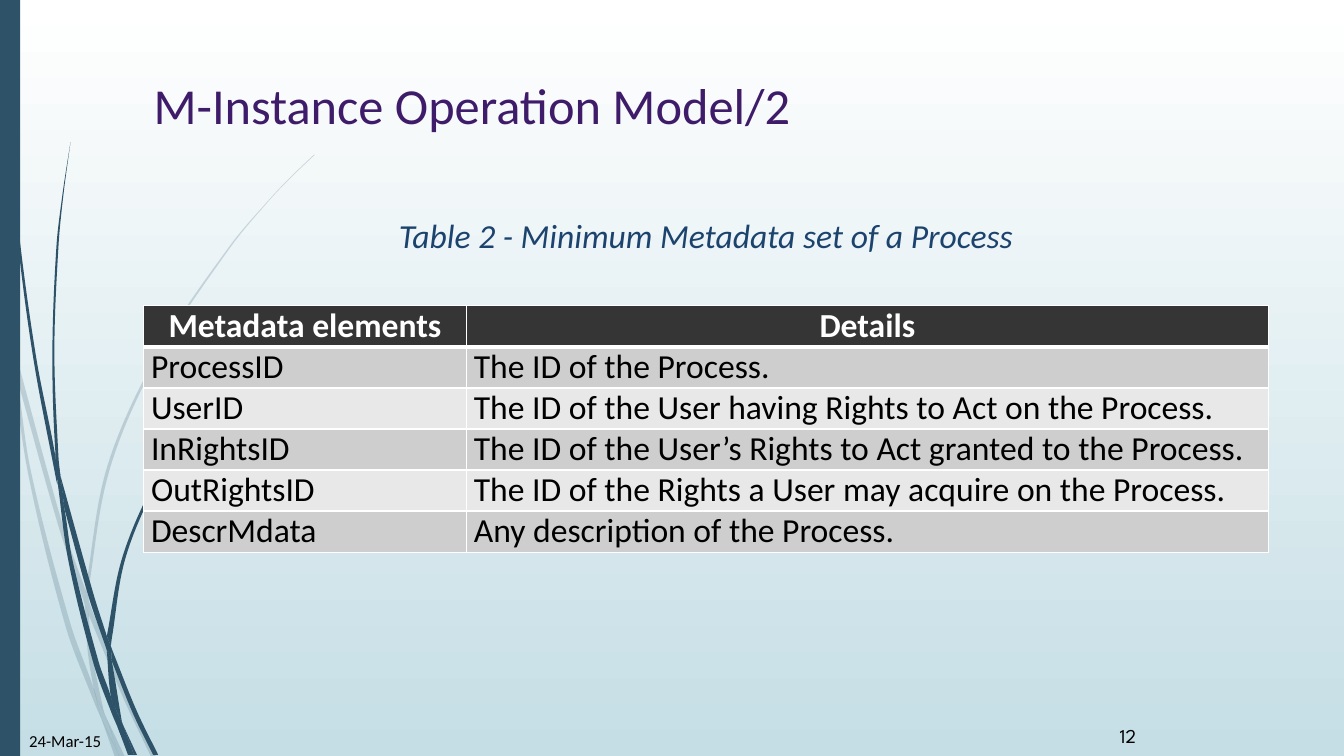
from itertools import pairwise
from lxml.etree import SubElement
from pptx import Presentation
from pptx.dml.color import RGBColor
from pptx.enum.shapes import MSO_SHAPE
from pptx.enum.text import MSO_ANCHOR, PP_ALIGN
from pptx.oxml import parse_xml
from pptx.oxml.ns import nsdecls, qn
from pptx.util import Pt

COLORS = {
    "white": "FFFFFF", "sky": "C5DEE5", "teal": "2E5369", "purple": "3F1C6A",
    "navy": "1C436D", "black": "000000", "header": "353535",
    "odd": "CECECE", "even": "E8E8E8",
}
GRID = 0.72
FINE = 10

PALE_BLADES = [
    ([(0, 282), (9, 322), (11, 350)], [(0, 299), (10, 344), (11, 350)]),
    ([(14, 345), (62, 520), (85, 586)], [(17, 376), (58, 522), (84, 599)]),
    ([(88, 596), (92, 607), (127, 692), (155, 751)],
     [(88, 610), (123, 694), (150, 751)]),
    ([(105, 711), (124, 751)], [(105, 711), (119, 751)]),
    ([(11, 350), (17, 376), (31, 469), (70, 619), (93, 683), (99, 707), (101, 714)],
     [(11, 350), (28, 470), (65, 621), (92, 693), (101, 714)]),
    ([(84, 599), (87, 646), (93, 683), (96, 692), (105, 711)],
     [(88, 608), (91, 646), (103, 706), (105, 711)]),
    ([(312, 153), (289, 175), (268, 197), (228, 244), (158, 348), (107, 461),
      (85, 584), (85, 586)],
     [(312, 154), (290, 175), (268, 198), (229, 245), (160, 349), (110, 462),
      (88, 584), (88, 596)]),
    ([(101, 714), (114, 751)], [(101, 714), (119, 751)]),
    ([(85, 586), (84, 599)], [(88, 596), (88, 608)]),
    ([(93, 683), (99, 707), (101, 714), (119, 751)],
     [(93, 683), (96, 692), (105, 711), (119, 751)]),
]
DARK_BLADES = [
    ([(4, 0), (5, 48), (8, 109), (19, 232), (36, 355), (55, 453), (57, 481)],
     [(3, 0), (4, 48), (7, 110), (17, 233), (33, 355), (56, 477), (57, 481)]),
    ([(60, 472), (93, 590), (106, 631)], [(64, 505), (88, 592), (106, 645)]),
    ([(110, 641), (113, 649), (136, 706), (157, 749)],
     [(111, 656), (132, 708), (152, 749)]),
    ([(57, 477), (64, 505), (72, 556), (98, 657), (110, 691), (117, 722)],
     [(57, 477), (68, 557), (93, 659), (111, 708), (117, 722)]),
    ([(70, 141), (62, 193), (56, 245), (52, 349), (55, 449), (60, 472)],
     [(70, 141), (63, 193), (58, 245), (54, 349), (58, 453), (60, 472)]),
    ([(122, 719), (136, 749)], [(122, 719), (133, 749)]),
    ([(55, 449), (55, 453), (57, 477), (64, 505)],
     [(55, 449), (60, 472), (64, 505)]),
    ([(260, 344), (245, 358), (231, 373), (204, 405), (156, 474), (122, 551),
      (106, 631)],
     [(261, 344), (245, 359), (231, 374), (205, 406), (158, 476), (125, 552),
      (111, 633), (110, 641)]),
    ([(117, 722), (127, 749)], [(117, 722), (131, 749)]),
    ([(106, 645), (110, 691), (116, 706), (122, 719)],
     [(109, 651), (111, 656), (121, 716), (122, 719)]),
    ([(106, 631), (106, 645)], [(110, 641), (111, 656)]),
    ([(110, 691), (117, 722), (130, 749)],
     [(110, 691), (116, 706), (122, 719), (133, 749)]),
]
METADATA = [
    ("Metadata elements", "Details"),
    ("ProcessID", "The ID of the Process."),
    ("UserID", "The ID of the User having Rights to Act on the Process."),
    ("InRightsID", "The ID of the User’s Rights to Act granted to the Process."),
    ("OutRightsID", "The ID of the Rights a User may acquire on the Process."),
    ("DescrMdata", "Any description of the Process."),
]


def rgb(name):
    return RGBColor.from_string(COLORS[name])


def write(tf, text, size=24, color="black", font="Calibri", bold=False,
          italic=False, align=PP_ALIGN.LEFT):
    tf.word_wrap = True
    tf.vertical_anchor = MSO_ANCHOR.TOP
    p = tf.paragraphs[0]
    p.alignment = align
    r = p.add_run()
    r.text = text
    r.font.size = Pt(size)
    r.font.name = font
    r.font.bold = bold
    r.font.italic = italic
    r.font.color.rgb = rgb(color)


def add_text(s, box, text, **style):
    sp = s.shapes.add_textbox(*map(Pt, box))
    write(sp.text_frame, text, **style)


def paint(sp, color):
    sp.shadow.inherit = False
    sp.fill.solid()
    sp.fill.fore_color.rgb = rgb(color)
    sp.line.fill.background()


def curved_edge(points):
    slopes = []
    for i in range(len(points)):
        x0, y0 = points[max(i - 1, 0)]
        x1, y1 = points[min(i + 1, len(points) - 1)]
        slopes.append((x1 - x0) / (y1 - y0))
    edge = [points[0]]
    for ((x0, y0), m0), ((x1, y1), m1) in pairwise(zip(points, slopes)):
        third = (y1 - y0) / 3
        edge += [(x0 + m0 * third, y0 + third), (x1 - m1 * third, y1 - third),
                 (x1, y1)]
    return edge


def bend(lines):
    for trio in zip(*[iter(lines)] * 3):
        curve = parse_xml(f'<a:cubicBezTo {nsdecls("a")}/>')
        trio[0].addprevious(curve)
        for line in trio:
            curve.append(line[0])
            line.getparent().remove(line)


def add_blade(group, edges, opacity):
    first, second = map(curved_edge, edges)
    outline = [(x * FINE, y * FINE) for x, y in first + second[::-1]]
    builder = group.shapes.build_freeform(*outline[0], scale=Pt(GRID) / FINE)
    builder.add_line_segments(outline[1:], close=True)
    sp = builder.convert_to_shape()
    lines = list(sp._element.iter(qn("a:lnTo")))
    bend(lines[:len(first) - 1])
    bend(lines[len(first):])
    paint(sp, "teal")
    if opacity < 100:
        clr = sp._element.spPr.find(qn("a:solidFill"))[0]
        SubElement(clr, qn("a:alpha"), val=str(opacity * 1000))


def add_backdrop(s, height):
    fill = s.background.fill
    fill.gradient()
    fill.gradient_angle = 270
    for stop, color, place in zip(fill.gradient_stops, ("white", "sky"), (0, 1)):
        stop.color.rgb = rgb(color)
        stop.position = place
    for blades, opacity in ((PALE_BLADES, 20), (DARK_BLADES, 100)):
        group = s.shapes.add_group_shape()
        for edges in blades:
            add_blade(group, edges, opacity)
    bar = s.shapes.add_shape(MSO_SHAPE.RECTANGLE, 0, 0, Pt(14.4), Pt(height))
    paint(bar, "teal")


def add_title(s, box, text):
    title = s.shapes.title
    title.left, title.top, title.width, title.height = map(Pt, box)
    write(title.text_frame, text, size=36, color="purple")


def set_borders(cell, row):
    tcPr = cell._tc.get_or_add_tcPr()
    for i, side in enumerate("LRTB"):
        width = 3 if (row, side) in ((0, "B"), (1, "T")) else 1
        tcPr.insert(i, parse_xml(
            f'<a:ln{side} {nsdecls("a")} w="{Pt(width)}"><a:solidFill>'
            f'<a:srgbClr val="{COLORS["white"]}"/></a:solidFill></a:ln{side}>'))


def add_metadata_table(s, box, rows):
    x, y, w, h = box
    table = s.shapes.add_table(len(rows), 2, *map(Pt, box)).table
    for col, share in zip(table.columns, (0.287, 0.713)):
        col.width = Pt(w * share)
    for i, texts in enumerate(rows):
        table.rows[i].height = Pt(h / len(rows))
        for cell, text in zip(table.rows[i].cells, texts):
            cell.margin_left = cell.margin_right = Pt(5.4)
            cell.margin_top = cell.margin_bottom = 0
            cell.fill.solid()
            if i == 0:
                cell.fill.fore_color.rgb = rgb("header")
                write(cell.text_frame, text, color="white", bold=True,
                      align=PP_ALIGN.CENTER)
            else:
                cell.fill.fore_color.rgb = rgb("odd" if i % 2 else "even")
                write(cell.text_frame, text, align=PP_ALIGN.JUSTIFY)
            set_borders(cell, i)


def add_footer(s, box):
    x, y, w, h = box
    add_text(s, (x, y + 1.4, 78.5, h), "24-Mar-15", size=12)
    add_text(s, (x + w - 43.9, y, 43.9, 3.6), "12", size=14,
             font="League Spartan")


def main():
    prs = Presentation()
    prs.slide_width, prs.slide_height = Pt(960), Pt(540)
    s = prs.slides.add_slide(prs.slide_layouts[5])
    left, width = 102.5, 803.5
    add_backdrop(s, 540)
    add_title(s, (left, 49, width, 100.8), "M-Instance Operation Model/2")
    add_metadata_table(s, (left, 218.5, width, 176), METADATA)
    add_footer(s, (13.7, 517, 822.9, 28.8))
    add_text(s, (left, 149.8, width, 46), "Table 2 - Minimum Metadata set of a Process",
             color="navy", italic=True, align=PP_ALIGN.CENTER)
    prs.save("out.pptx")


if __name__ == "__main__":
    main()
